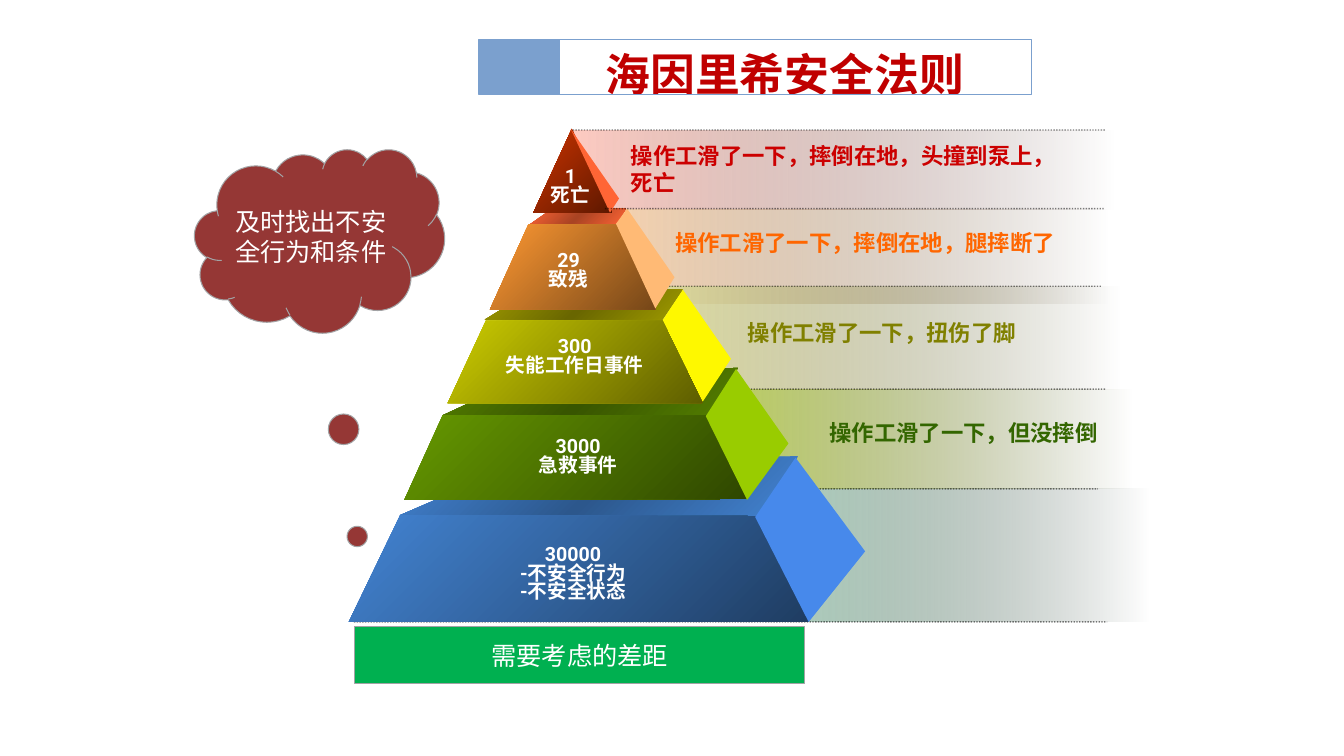
import lxml.etree
import pptx
import pptx.dml.color
import pptx.enum.dml
import pptx.enum.shapes
import pptx.enum.text
import pptx.oxml.ns
import pptx.util

RGB = pptx.dml.color.RGBColor
Inches = pptx.util.Inches
Pt = pptx.util.Pt
qn = pptx.oxml.ns.qn
SHAPES = pptx.enum.shapes.MSO_SHAPE
ANCHOR = pptx.enum.text.MSO_ANCHOR
ALIGN = pptx.enum.text.PP_ALIGN

BLACK = RGB(0x00, 0x00, 0x00)
WHITE = RGB(0xFF, 0xFF, 0xFF)
TITLE_RED = RGB(0xC0, 0x00, 0x00)
TITLE_BLUE = RGB(0x7B, 0xA0, 0xCE)
MAROON = RGB(0x95, 0x37, 0x35)
GREEN = RGB(0x00, 0xB0, 0x50)
GREY = RGB(0xA2, 0xA3, 0xA5)
RED = RGB(0xCC, 0x00, 0x00)
ORANGE = RGB(0xFF, 0x66, 0x00)
OLIVE = RGB(0x80, 0x80, 0x00)
DARK_GREEN = RGB(0x33, 0x66, 0x00)

BANDS = [
    ((5.68, 1.29, 5.38, 0.79), RGB(0xFE, 0xCB, 0xC2), RGB(0x76, 0x5E, 0x5A)),
    ((5.74, 2.08, 5.26, 0.93), RGB(0xFF, 0xD8, 0xB1), RGB(0x76, 0x64, 0x52)),
    ((7.76, 4.85, 3.64, 1.32), RGB(0xAC, 0xCE, 0xBD), RGB(0x50, 0x5F, 0x57)),
    ((6.3, 2.84, 4.82, 1.02), RGB(0xE2, 0xE0, 0xA0), RGB(0x69, 0x68, 0x4A)),
    ((6.95, 3.86, 4.29, 0.99), RGB(0xBE, 0xD2, 0x5A), RGB(0x58, 0x61, 0x2A)),
]
RULES_BEHIND = [(6, 10.93, 2.84), (6.95, 10.96, 3.86), (7.44, 10.89, 4.85), (3.51, 10.98, 6.17)]
RULES_IN_FRONT = [(6, 10.96, 2.07), (5.68, 10.97, 1.29)]
EXAMPLES = [
    ((6.16, 1.36, 4.51, 0.64), "操作工滑了一下，摔倒在地，头撞到泵上，死亡", RED, True),
    ((6.6, 2.22, 4.07, 0.37), "操作工滑了一下，摔倒在地，腿摔断了", ORANGE, True),
    ((7.32, 3.12, 2.91, 0.37), "操作工滑了一下，扭伤了脚", OLIVE, False),
    ((8.13, 4.11, 2.91, 0.37), "操作工滑了一下，但没摔倒", DARK_GREEN, False),
]
FACES = [
    ([(3.97, 5.11), (7.5, 5.12), (7.91, 4.53), (5.2, 4.58)],
     [RGB(0x43, 0x84, 0xD3), RGB(0x2C, 0x57, 0x8C), RGB(0x43, 0x84, 0xD3)]),
    ([(3.46, 6.17), (8.02, 6.17), (7.5, 5.12), (3.97, 5.11)],
     [RGB(0x43, 0x84, 0xD3), RGB(0x1F, 0x3D, 0x62)]),
    ([(8.02, 6.17), (8.58, 5.47), (7.89, 4.54), (7.49, 5.13)], [RGB(0x47, 0x89, 0xEB)]),
    ([(4.39, 4.12), (7.02, 4.12), (7.32, 3.65), (5.3, 3.7)],
     [RGB(0x55, 0x80, 0x00), RGB(0x38, 0x55, 0x00), RGB(0x55, 0x80, 0x00)]),
    ([(4.01, 4.96), (7.4, 4.95), (7.01, 4.12), (4.39, 4.12)],
     [RGB(0x66, 0x99, 0x00), RGB(0x2F, 0x47, 0x00)]),
    ([(7.41, 4.96), (7.82, 4.4), (7.3, 3.66), (7, 4.13)], [RGB(0x99, 0xCC, 0x00)]),
    ([(6.57, 3.18), (6.96, 4), (7.25, 3.56), (6.77, 2.87)], [RGB(0xFE, 0xF8, 0x00)]),
    ([(4.81, 3.17), (6.57, 3.17), (6.77, 2.87), (5.3, 2.87)],
     [RGB(0x9E, 0x9A, 0x00), RGB(0x69, 0x66, 0x00), RGB(0x9E, 0x9A, 0x00)]),
    ([(4.44, 4), (6.97, 4), (6.57, 3.18), (4.82, 3.18)],
     [RGB(0xCC, 0xCC, 0x00), RGB(0x5E, 0x5E, 0x00)]),
    ([(5.25, 2.23), (6.11, 2.23), (6.21, 2.07), (5.48, 2.07)],
     [RGB(0xFF, 0x65, 0x35), RGB(0xA9, 0x43, 0x23), RGB(0xFF, 0x65, 0x35)]),
    ([(4.86, 3.07), (6.5, 3.07), (6.12, 2.23), (5.24, 2.23)],
     [RGB(0xFF, 0x99, 0x33), RGB(0x76, 0x47, 0x18)]),
    ([(6.5, 3.06), (6.69, 2.75), (6.22, 2.07), (6.11, 2.22)], [RGB(0xFF, 0xBA, 0x75)]),
    ([(5.29, 2.11), (6.07, 2.11), (5.67, 1.28)],
     [RGB(0xCC, 0x33, 0x00), RGB(0x5E, 0x18, 0x00)]),
    ([(6.05, 2.11), (6.14, 1.97), (5.66, 1.28)], [RGB(0xFF, 0x65, 0x35)]),
]
LEVELS = [
    ((5.36, 1.62, 0.6, 0.48), ["1", "死亡"], False),
    ((5.08, 2.46, 1.12, 0.48), ["29", "致残"], True),
    ((4.75, 3.31, 1.9, 0.48), ["300", "失能工作日事件"], True),
    ((4.35, 4.3, 2.77, 0.48), ["3000", "急救事件"], True),
    ((3.83, 5.37, 3.71, 0.67), ["30000", "-不安全行为", "-不安全状态"], True),
]


class PyramidSlide:
    """Draw the elements of the safety pyramid in one shared style."""

    cjk_font = "Noto Sans CJK SC"
    latin_font = "Roboto"

    def __init__(self, deck):
        self.slide = deck.slides.add_slide(deck.slide_layouts[5])
        self.shapes = self.slide.shapes

    def fill_text(self, frame, lines, size, color, font, bold=False, align=ALIGN.LEFT, spacing=None):
        frame.text = "\n".join(lines)
        for paragraph in frame.paragraphs:
            paragraph.alignment = align
            paragraph.line_spacing = spacing
            paragraph.font.size = Pt(size)
            paragraph.font.bold = bold
            paragraph.font.color.rgb = color
            paragraph.font.name = font
            style = paragraph._p.pPr.find(qn("a:defRPr"))
            lxml.etree.SubElement(style, qn("a:ea"), typeface=self.cjk_font)

    def title(self, box, text):
        heading = self.shapes.title
        heading.left, heading.top, heading.width, heading.height = map(Inches, box)
        frame = heading.text_frame
        frame.vertical_anchor = ANCHOR.TOP
        frame.word_wrap = True
        frame.auto_size = pptx.enum.text.MSO_AUTO_SIZE.SHAPE_TO_FIT_TEXT
        self.fill_text(frame, [text], 32, TITLE_RED, self.cjk_font, True, ALIGN.CENTER)

    def text(self, box, lines, size, color, wrap, align=ALIGN.LEFT, spacing=None):
        frame = self.shapes.add_textbox(*map(Inches, box)).text_frame
        frame.word_wrap = wrap
        frame.auto_size = pptx.enum.text.MSO_AUTO_SIZE.SHAPE_TO_FIT_TEXT
        self.fill_text(frame, lines, size, color, self.latin_font, True, align, spacing)
        return frame

    def level(self, box, lines, wrap):
        frame = self.text(box, lines, 14, WHITE, wrap, ALIGN.CENTER, 0.8)
        for paragraph in frame.paragraphs:
            effects = lxml.etree.SubElement(paragraph.runs[0]._r.get_or_add_rPr(), qn("a:effectLst"))
            shadow = lxml.etree.SubElement(effects, qn("a:outerShdw"), dist="17961", dir="2700000")
            lxml.etree.SubElement(shadow, qn("a:srgbClr"), val="808080")

    def paint(self, shape, colors, angle=45, fade=False):
        shape.shadow.inherit = False
        if not colors:
            shape.fill.background()
        elif len(colors) == 1:
            shape.fill.solid()
            shape.fill.fore_color.rgb = colors[0]
        else:
            shape.fill.gradient()
            gradient = shape._element.spPr.find(qn("a:gradFill"))
            stops = gradient.find(qn("a:gsLst"))
            stops.clear()
            for index, color in enumerate(colors):
                position = str(100000 * index // (len(colors) - 1))
                stop = lxml.etree.SubElement(stops, qn("a:gs"), pos=position)
                tint = lxml.etree.SubElement(stop, qn("a:srgbClr"), val=str(color))
            if fade:
                lxml.etree.SubElement(tint, qn("a:alpha"), val="0")
            direction = gradient.find(qn("a:lin"))
            direction.set("ang", str(angle * 60000))
            direction.set("scaled", "0")

    def block(self, kind, box, colors, line=None, width=1, fade=False):
        shape = self.shapes.add_shape(kind, *map(Inches, box))
        self.paint(shape, colors, 0, fade)
        if line is None:
            shape.line.fill.background()
        else:
            shape.line.color.rgb = line
            shape.line.width = Pt(width)
        return shape

    def note(self, kind, box, color, text):
        shape = self.block(kind, box, [color], GREY, 0.75)
        frame = shape.text_frame
        frame.word_wrap = True
        frame.vertical_anchor = ANCHOR.MIDDLE
        frame.margin_left = frame.margin_right = Inches(0.04)
        frame.margin_top = frame.margin_bottom = Inches(0.05)
        self.fill_text(frame, [text], 18, WHITE, self.cjk_font, align=ALIGN.CENTER)
        return shape

    def face(self, points, colors):
        corners = [(Inches(x), Inches(y)) for x, y in points]
        outline = self.shapes.build_freeform(*corners[0], scale=1.0)
        outline.add_line_segments(corners[1:], close=True)
        shape = outline.convert_to_shape()
        self.paint(shape, colors)
        shape.line.fill.background()

    def rule(self, left, right, y):
        straight = pptx.enum.shapes.MSO_CONNECTOR.STRAIGHT
        line = self.shapes.add_connector(straight, *map(Inches, (left, y, right, y)))
        line.line.color.rgb = BLACK
        line.line.width = Pt(1)
        line.line.dash_style = pptx.enum.dml.MSO_LINE.ROUND_DOT
        properties = line._element.spPr
        ink = properties.find(".//" + qn("a:srgbClr"))
        lxml.etree.SubElement(ink, qn("a:alpha"), val="50000")
        lxml.etree.SubElement(properties, qn("a:effectLst"))


def main():
    deck = pptx.Presentation()
    deck.slide_width, deck.slide_height = Inches(13.33), Inches(7.5)
    pyramid = PyramidSlide(deck)
    pyramid.title((5.41, 0.41, 4.75, 0.87), "海因里希安全法则")
    pyramid.block(SHAPES.RECTANGLE, (4.9, 0.39, 5.33, 0.55), [], TITLE_BLUE)
    pyramid.block(SHAPES.RECTANGLE, (4.75, 0.39, 0.8, 0.55), [TITLE_BLUE], TITLE_BLUE)
    for box, start, end in BANDS:
        pyramid.block(SHAPES.RECTANGLE, box, [start, end], fade=True)
    for span in RULES_BEHIND:
        pyramid.rule(*span)
    for points, colors in FACES:
        pyramid.face(points, colors)
    for span in RULES_IN_FRONT:
        pyramid.rule(*span)
    for box, example, color, wrap in EXAMPLES:
        pyramid.text(box, [example], 16, color, wrap)
    for box, lines, wrap in LEVELS:
        pyramid.level(box, lines, wrap)
    cloud = pyramid.note(SHAPES.CLOUD_CALLOUT, (1.93, 1.48, 2.48, 1.82), MAROON, "及时找出不安全行为和条件")
    cloud.adjustments[0], cloud.adjustments[1] = 0.2, 2.14
    pyramid.note(SHAPES.RECTANGLE, (3.52, 6.22, 4.46, 0.56), GREEN, "需要考虑的差距")
    deck.save("out.pptx")


if __name__ == "__main__":
    main()
